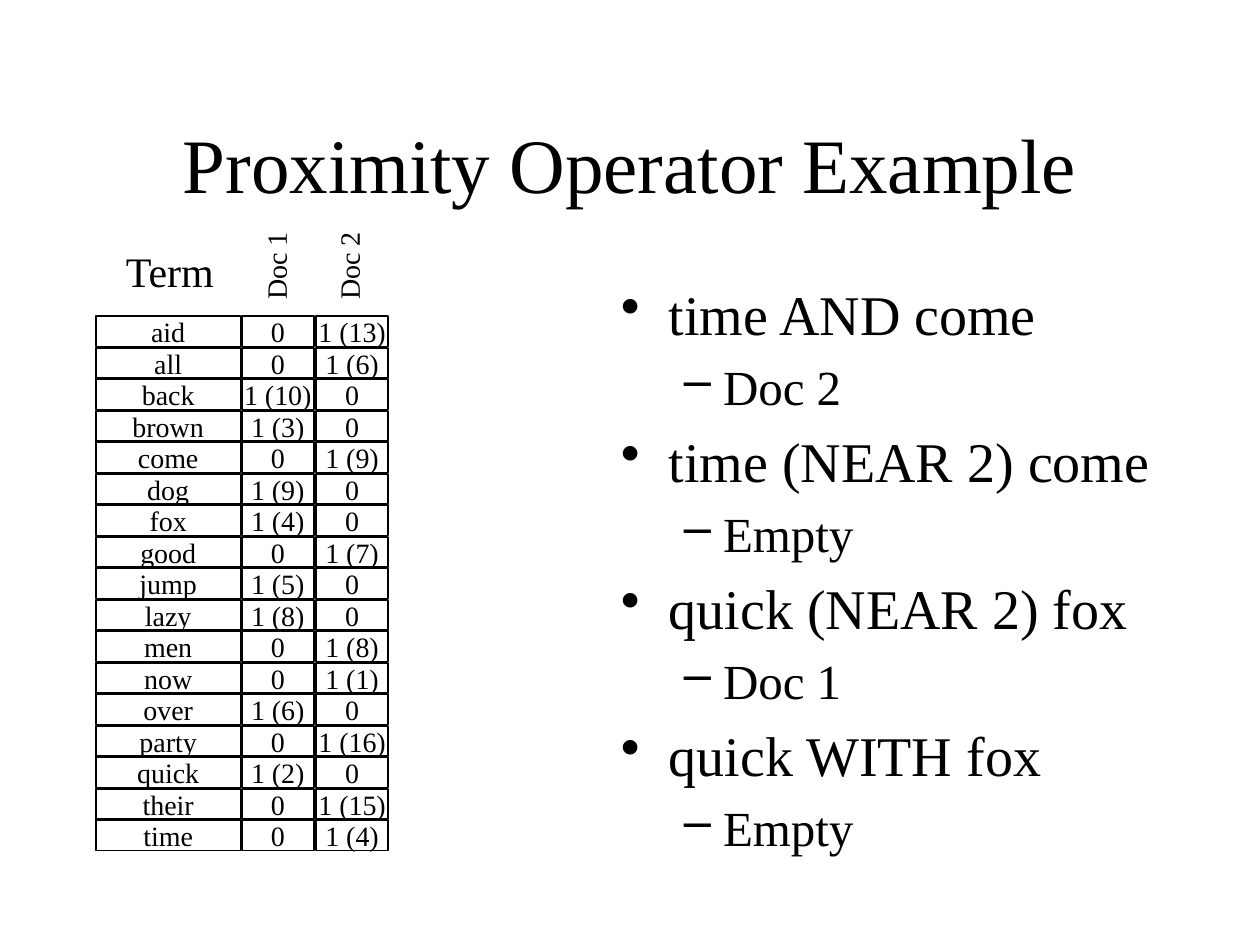
from pptx import Presentation
from pptx.dml.color import RGBColor
from pptx.enum.shapes import MSO_SHAPE as Shape
from pptx.enum.text import MSO_ANCHOR as Anchor, MSO_AUTO_SIZE as AutoSize, PP_ALIGN as Align
from pptx.oxml.ns import qn
from pptx.util import Inches, Pt
from lxml import etree

FONT = "Times New Roman"
COLORS = {"ink": "000000"}
TITLE = "Proximity Operator Example"
QUERIES = [
    ("time AND come", "Doc 2"),
    ("time (NEAR 2) come", "Empty"),
    ("quick (NEAR 2) fox", "Doc 1"),
    ("quick WITH fox", "Empty"),
]
POSTINGS = [
    ("aid", "0", "1 (13)"),
    ("all", "0", "1 (6)"),
    ("back", "1 (10)", "0"),
    ("brown", "1 (3)", "0"),
    ("come", "0", "1 (9)"),
    ("dog", "1 (9)", "0"),
    ("fox", "1 (4)", "0"),
    ("good", "0", "1 (7)"),
    ("jump", "1 (5)", "0"),
    ("lazy", "1 (8)", "0"),
    ("men", "0", "1 (8)"),
    ("now", "0", "1 (1)"),
    ("over", "1 (6)", "0"),
    ("party", "0", "1 (16)"),
    ("quick", "1 (2)", "0"),
    ("their", "0", "1 (15)"),
    ("time", "0", "1 (4)"),
]
COLUMNS = [(0.76, 1.15), (1.92, 0.57), (2.51, 0.57)]
GRID_TOP, ROW_PITCH, CELL_HEIGHT = 2.51, 0.25, 0.24
HEADINGS = [
    ("Term", 24, (0.9, 1.9, 0.92, 0.5), 0),
    ("Doc 1", 16, (1.82, 1.93, 0.73, 0.36), 270),
    ("Doc 2", 16, (2.4, 1.93, 0.73, 0.36), 270),
]
LEVELS = [
    {"size": 32, "bullet": "•", "margin": 0.38, "indent": -0.38, "before": 6.4},
    {"size": 28, "bullet": "–", "margin": 0.81, "indent": -0.31, "before": 5.6},
]


def color(name):
    return RGBColor.from_string(COLORS[name])


def add_run(paragraph, text, size):
    run = paragraph.add_run()
    run.text = text
    run.font.name = FONT
    run.font.size = Pt(size)
    run.font.color.rgb = color("ink")


def add_title(slide):
    title = slide.shapes.title
    title.left, title.top, title.width, title.height = map(Inches, (0.5, 0.67, 9, 1.25))
    title.text_frame.vertical_anchor = Anchor.MIDDLE
    paragraph = title.text_frame.paragraphs[0]
    paragraph.alignment = Align.CENTER
    add_run(paragraph, TITLE, 44)


def add_cell(slide, text, left, top, width):
    cell = slide.shapes.add_shape(Shape.RECTANGLE, *map(Inches, (left, top, width, CELL_HEIGHT)))
    cell.shadow.inherit = False
    cell.fill.background()
    cell.line.color.rgb = color("ink")
    cell.line.width = Pt(1)
    frame = cell.text_frame
    frame.word_wrap = False
    frame.vertical_anchor = Anchor.MIDDLE
    frame.paragraphs[0].alignment = Align.CENTER
    add_run(frame.paragraphs[0], text, 16)


def add_heading(slide, text, size, place, rotation):
    heading = slide.shapes.add_textbox(*map(Inches, place))
    heading.rotation = rotation
    frame = heading.text_frame
    frame.word_wrap = True
    frame.auto_size = AutoSize.NONE
    frame.margin_right = 0
    add_run(frame.paragraphs[0], text, size)


def add_bullet(paragraph, text, level):
    style = LEVELS[level]
    paragraph.level = level
    paragraph.space_before = Pt(style["before"])
    properties = paragraph._p.get_or_add_pPr()
    properties.set("marL", str(Inches(style["margin"])))
    properties.set("indent", str(Inches(style["indent"])))
    etree.SubElement(properties, qn("a:buChar")).set("char", style["bullet"])
    add_run(paragraph, text, style["size"])


def add_queries(slide):
    frame = slide.shapes.add_textbox(*map(Inches, (4.83, 2.17, 4.42, 4.5))).text_frame
    frame.word_wrap = True
    lines = [(text, level) for query in QUERIES for level, text in enumerate(query)]
    for index, (text, level) in enumerate(lines):
        paragraph = frame.add_paragraph() if index else frame.paragraphs[0]
        add_bullet(paragraph, text, level)


def main():
    presentation = Presentation()
    presentation.slide_width, presentation.slide_height = Inches(10), Inches(7.5)
    slide = presentation.slides.add_slide(presentation.slide_layouts[5])
    add_title(slide)
    add_queries(slide)
    for row, values in enumerate(POSTINGS):
        for text, (left, width) in zip(values, COLUMNS):
            add_cell(slide, text, left, GRID_TOP + row * ROW_PITCH, width)
    for heading in HEADINGS:
        add_heading(slide, *heading)
    presentation.save("out.pptx")


if __name__ == "__main__":
    main()
